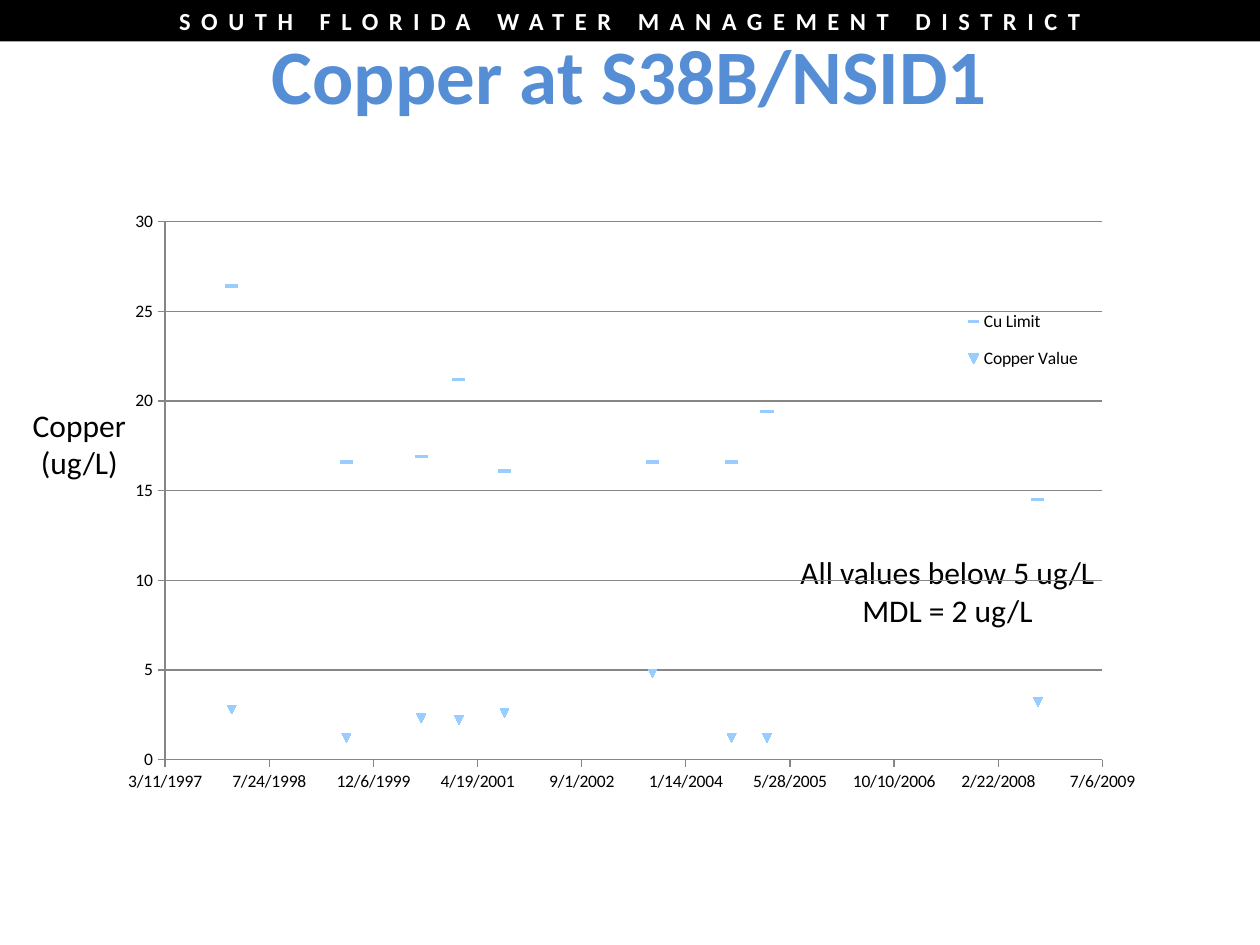
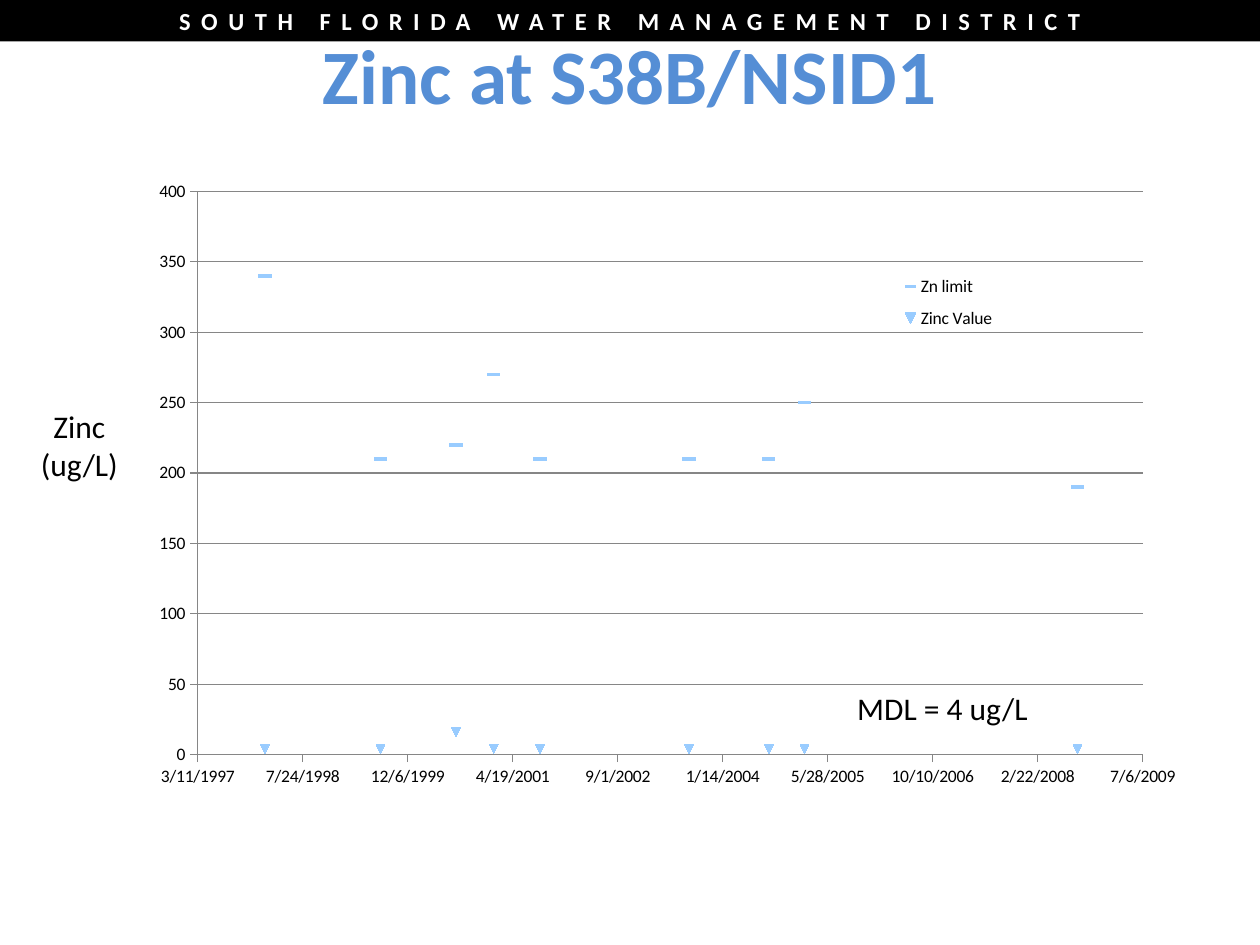
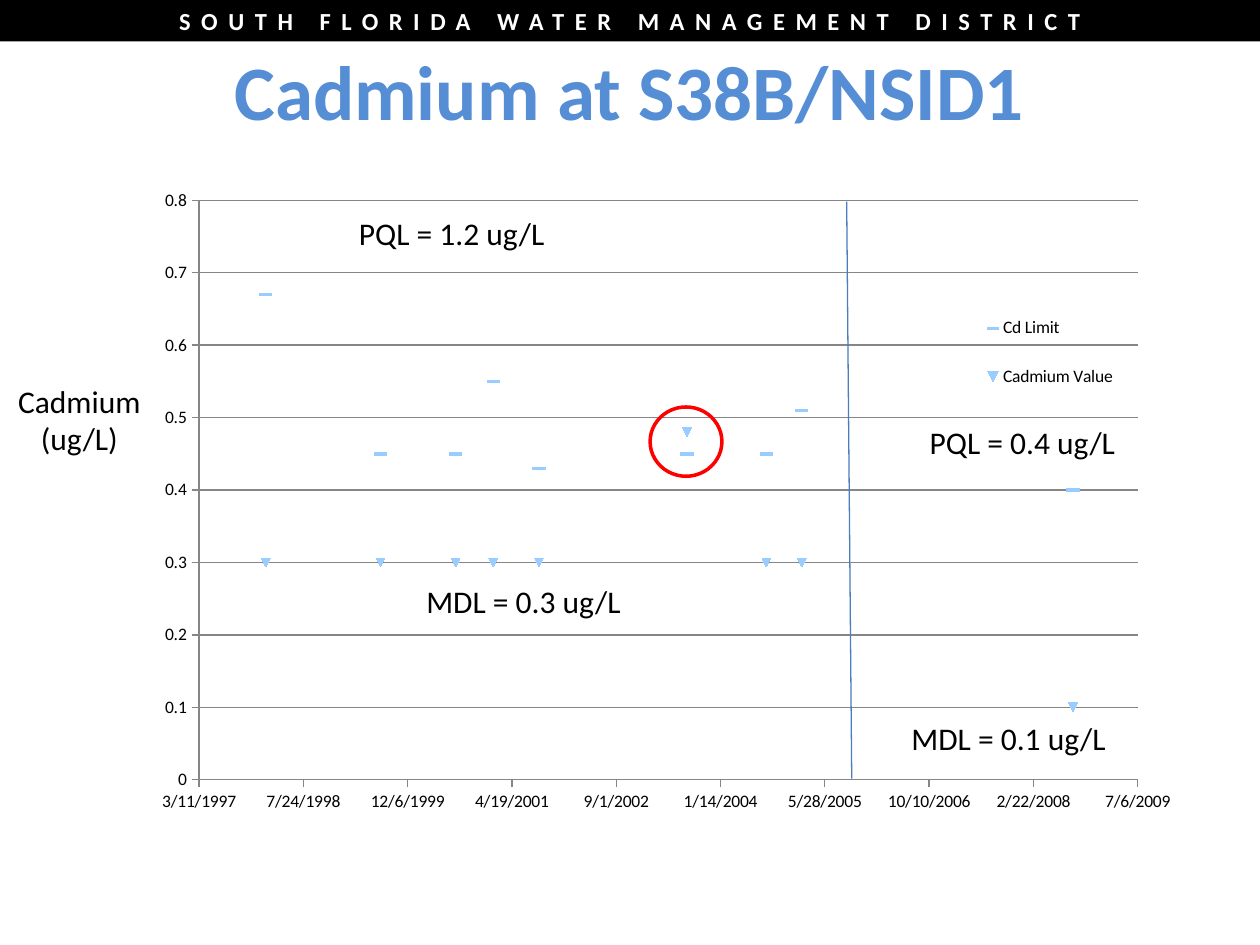
import pptx
import pptx.chart.data
import pptx.dml.color
import pptx.enum.chart
import pptx.enum.shapes
import pptx.enum.text
import pptx.oxml
import pptx.oxml.ns
import pptx.util
from pptx.util import Inches

RGBColor = pptx.dml.color.RGBColor
BLACK = RGBColor(0, 0, 0)
WHITE = RGBColor(255, 255, 255)
TITLE_BLUE = RGBColor(0x55, 0x8E, 0xD5)
RULE_BLUE = RGBColor(0x4B, 0x7E, 0xBC)
MARKER_BLUE = RGBColor(0x99, 0xCC, 0xFF)
GRID_GREY = RGBColor(0x86, 0x86, 0x86)
RED = RGBColor(255, 0, 0)
FONT = "Calibri"
DISTRICT = "SOUTH FLORIDA WATER MANAGEMENT DISTRICT"

# Sampling days as spreadsheet date numbers, to the nearest ten
DAYS = [35820, 36370, 36730, 36910, 37130, 37840, 38220, 38390, 39690]
FIRST_DAY, LAST_DAY, DAY_STEP = 35500, 40000, 500

# Boxes are left, top, width, height; plot and legend are measured from the chart
METALS = [
    dict(
        title="Copper at S38B/NSID1", title_top=0.17,
        label="Copper (ug/L)", label_top=3.17,
        notes=[(["All values below 5 ug/L", "MDL = 2 ug/L"], (6.07, 4.34, 2.9, 0.71))],
        chart=(0.94, 1.56, 8.75, 4.85), chart_on_top=True,
        plot=(0.37, 0.2, 7.44, 4.27), legend=(6.48, 0.78, 1.4, 0.72),
        scale=(30, 5, "0"),
        series={"Cu Limit": [26.4, 16.6, 16.9, 21.2, 16.1, 16.6, 16.6, 19.4, 14.5],
                "Copper Value": [2.8, 1.2, 2.3, 2.2, 2.6, 4.8, 1.2, 1.2, 3.2]},
    ),
    dict(
        title="Zinc at S38B/NSID1", title_top=0.17,
        label="Zinc (ug/L)", label_top=3.18,
        notes=[(["MDL = 4 ug/L"], (6.62, 5.42, 1.72, 0.4))],
        chart=(1.05, 1.35, 8.41, 5.24), chart_on_top=False,
        plot=(0.52, 0.17, 7.5, 4.47), legend=(6.06, 0.75, 0.84, 0.6),
        scale=(400, 50, "0"),
        series={"Zn limit": [340, 210, 220, 270, 210, 210, 210, 250, 190],
                "Zinc Value": [4, 4, 16, 4, 4, 4, 4, 4, 4]},
    ),
    dict(
        title="Cadmium at S38B/NSID1", title_top=0.3,
        label="Cadmium (ug/L)", label_top=2.98,
        notes=[(["MDL = 0.1 ug/L"], (7.03, 5.66, 1.95, 0.4)),
               (["MDL = 0.3 ug/L"], (3.18, 4.57, 1.95, 0.4)),
               (["PQL = 1.2 ug/L"], (2.49, 1.65, 2.19, 0.4)),
               (["PQL = 0.4 ug/L"], (7.26, 3.31, 1.71, 0.4))],
        chart=(1.19, 1.43, 8.17, 5.17), chart_on_top=False,
        plot=(0.39, 0.16, 7.45, 4.6), legend=(6.45, 0.87, 1.39, 0.99),
        scale=(0.8, 0.1, "General"),
        series={"Cd Limit": [0.67, 0.45, 0.45, 0.55, 0.43, 0.45, 0.45, 0.51, 0.4],
                "Cadmium Value": [0.3, 0.3, 0.3, 0.3, 0.3, 0.48, 0.3, 0.3, 0.1]},
        divider=(6.72, 1.6, 6.76, 6.18), circle=(5.16, 3.23, 0.57, 0.55),
    ),
]


def inches(values):
    return [Inches(value) for value in values]


def format_font(font, size, color, bold=False):
    values = dict(name=FONT, size=pptx.util.Pt(size), bold=bold)
    for name, value in values.items():
        setattr(font, name, value)
    font.color.rgb = color


def write_text(box, lines, size, color, bold=False, anchor="TOP"):
    frame = box.text_frame
    frame.word_wrap = True
    frame.vertical_anchor = getattr(pptx.enum.text.MSO_ANCHOR, anchor)
    frame.text = "\n".join(lines)
    for para in frame.paragraphs:
        para.alignment = pptx.enum.text.PP_ALIGN.CENTER
        for span in para.runs:
            format_font(span.font, size, color, bold)


def add_text(page, lines, place, size=18, color=BLACK, bold=False):
    write_text(page.shapes.add_textbox(*inches(place)), lines, size, color, bold)


def add_band(page):
    band = page.shapes.add_shape(
        pptx.enum.shapes.MSO_SHAPE.RECTANGLE, *inches((0, 0, 10, 0.33)))
    band.shadow.inherit = False
    band.fill.solid()
    band.fill.fore_color.rgb = BLACK
    band.line.fill.background()
    write_text(band, [DISTRICT], 14, WHITE, True, "MIDDLE")
    band.text_frame.paragraphs[0].runs[0].font._element.set("spc", "600")


def layout_xml(place, chart_place, inner=False):
    target = '<c:layoutTarget val="inner"/>' if inner else ""
    modes = '<c:xMode val="edge"/><c:yMode val="edge"/>'
    chart_size = chart_place[2:] * 2
    sizes = "".join(f'<c:{key} val="{length / whole:.4f}"/>'
                    for key, length, whole in zip("xywh", place, chart_size))
    return pptx.oxml.parse_xml(
        f'<c:layout {pptx.oxml.ns.nsdecls("c")}><c:manualLayout>'
        f"{target}{modes}{sizes}</c:manualLayout></c:layout>")


def set_layout(element, position, layout):
    for old in element.findall(pptx.oxml.ns.qn("c:layout")):
        element.remove(old)
    element.insert(position, layout)


def format_axis(axis, low, high, step, number_format):
    axis.minimum_scale, axis.maximum_scale, axis.major_unit = low, high, step
    axis.tick_labels.number_format = number_format
    axis.tick_labels.number_format_is_linked = False
    axis.major_tick_mark = pptx.enum.chart.XL_TICK_MARK.OUTSIDE
    axis.format.line.color.rgb = GRID_GREY


def add_metal_chart(page, metal):
    data = pptx.chart.data.XyChartData()
    for name, values in metal["series"].items():
        series = data.add_series(name)
        for day, value in zip(DAYS, values):
            series.add_data_point(day, value)
    chart = page.shapes.add_chart(
        pptx.enum.chart.XL_CHART_TYPE.XY_SCATTER, *inches(metal["chart"]), data).chart
    format_font(chart.font, 10, BLACK)
    chart.has_title = False
    chart.plots[0].vary_by_categories = False

    # Axes and grid
    top, step, number_format = metal["scale"]
    format_axis(chart.category_axis, FIRST_DAY, LAST_DAY, DAY_STEP, "m/d/yyyy")
    format_axis(chart.value_axis, 0, top, step, number_format)
    chart.category_axis.has_major_gridlines = False
    chart.value_axis.has_major_gridlines = True
    chart.value_axis.major_gridlines.format.line.color.rgb = GRID_GREY

    # Limits are dashes; measured values keep the automatic marker
    limit, measured = chart.plots[0].series
    for series in (limit, measured):
        series.smooth = False
        series.format.line.fill.background()
    limit.marker.style = pptx.enum.chart.XL_MARKER_STYLE.DASH
    limit.marker.size = 7
    limit.marker.format.fill.solid()
    limit.marker.format.fill.fore_color.rgb = MARKER_BLUE

    # Legend and plot positions
    chart.has_legend = True
    legend = chart.legend
    legend.position = pptx.enum.chart.XL_LEGEND_POSITION.RIGHT
    legend.include_in_layout = False
    format_font(legend.font, 10, BLACK)
    set_layout(legend._element, 1, layout_xml(metal["legend"], metal["chart"]))
    set_layout(chart._chartSpace.chart.plotArea, 0,
               layout_xml(metal["plot"], metal["chart"], True))

    # Clear background
    clear = pptx.oxml.parse_xml(
        f'<c:spPr {pptx.oxml.ns.nsdecls("c", "a")}><a:noFill/>'
        "<a:ln><a:noFill/></a:ln></c:spPr>")
    chart._chartSpace.chart.addnext(clear)


def add_divider(page, ends):
    divider = page.shapes.add_connector(
        pptx.enum.shapes.MSO_CONNECTOR.STRAIGHT, *inches(ends))
    divider.line.color.rgb = RULE_BLUE
    divider.line.width = pptx.util.Pt(0.75)
    divider._element.spPr.append(pptx.oxml.parse_xml(
        f'<a:effectLst {pptx.oxml.ns.nsdecls("a")}/>'))


def add_circle(page, place):
    circle = page.shapes.add_shape(pptx.enum.shapes.MSO_SHAPE.OVAL, *inches(place))
    circle.shadow.inherit = False
    circle.fill.background()
    circle.line.color.rgb = RED
    circle.line.width = pptx.util.Pt(2)


def add_metal_page(deck, metal):
    page = deck.slides.add_slide(deck.slide_layouts[6])
    add_band(page)
    if not metal["chart_on_top"]:
        add_metal_chart(page, metal)
    add_text(page, [metal["title"]], (0.5, metal["title_top"], 9, 1.25),
             44, TITLE_BLUE, True)
    add_text(page, [metal["label"]], (0, metal["label_top"], 1.26, 0.71))
    for lines, place in metal["notes"]:
        add_text(page, lines, place)
    if metal["chart_on_top"]:
        add_metal_chart(page, metal)
    if "divider" in metal:
        add_divider(page, metal["divider"])
        add_circle(page, metal["circle"])


def main():
    deck = pptx.Presentation()
    deck.slide_width, deck.slide_height = inches((10, 7.5))
    for metal in METALS:
        add_metal_page(deck, metal)
    deck.save("out.pptx")


if __name__ == "__main__":
    main()
